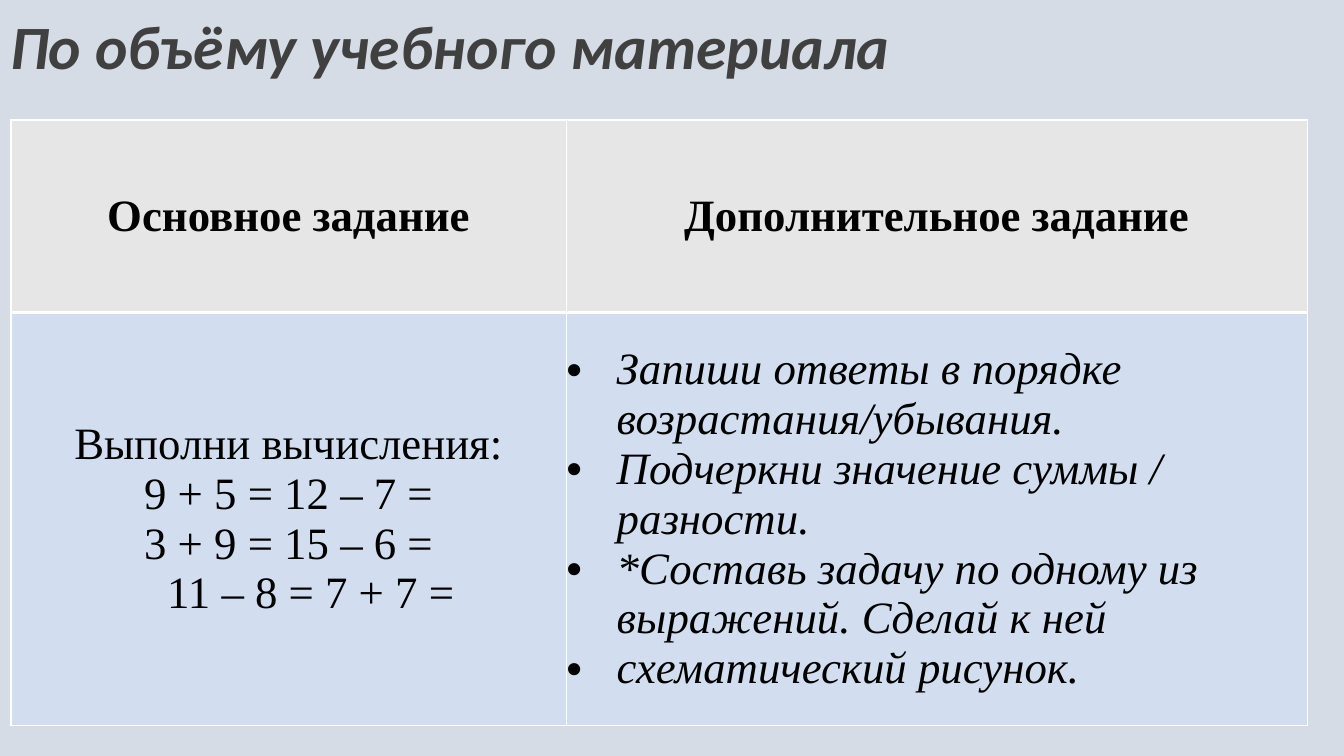
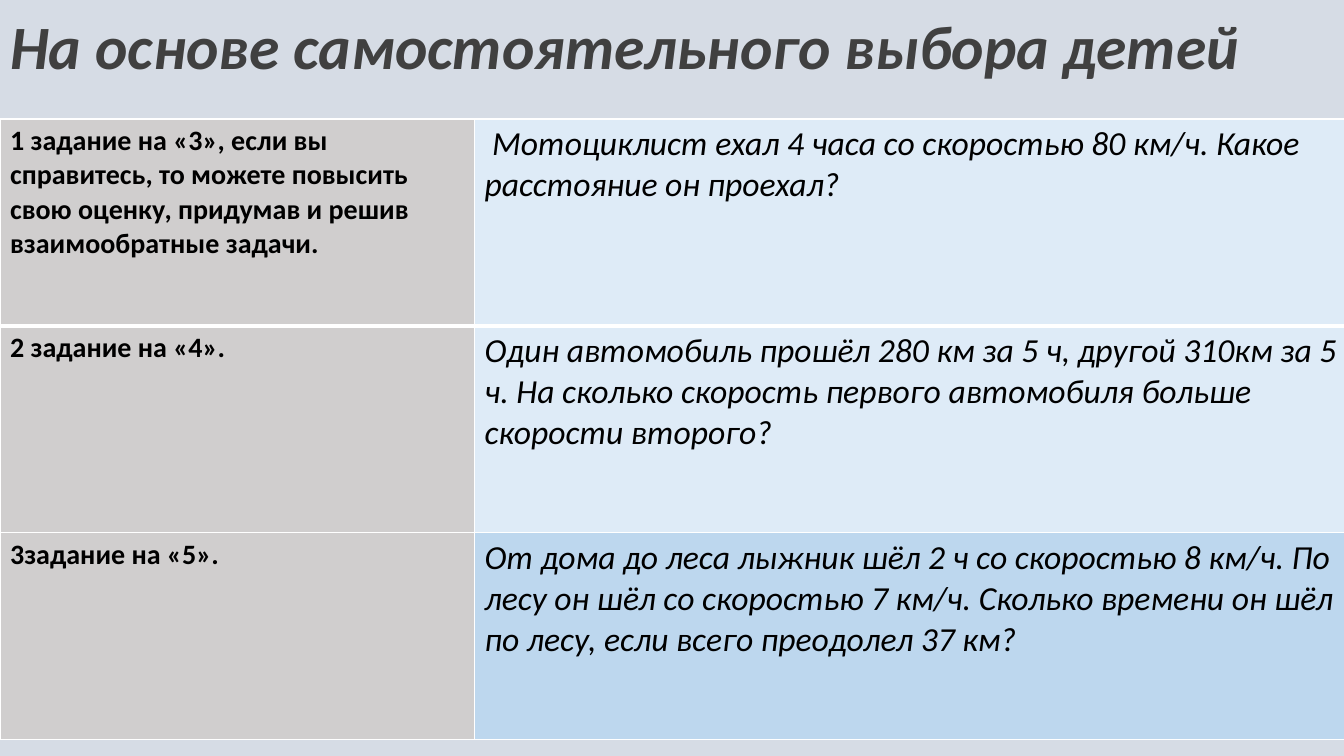
"""Build two slides of differentiated school tasks, each a title over a table."""
from lxml.etree import SubElement
from pptx import Presentation
from pptx.dml.color import RGBColor
from pptx.enum.text import MSO_ANCHOR, MSO_AUTO_SIZE, PP_ALIGN
from pptx.oxml.ns import qn
from pptx.util import Inches, Pt

SANS, SERIF = "Calibri", "Times New Roman"
BACKGROUND, TITLE_INK, INK, RULE = "D6DCE5", "404040", "000000", "FFFFFF"
HEADER_GREY, TASK_GREY = "E7E6E6", "D0CECE"
BODY_BLUE, PALE_BLUE, STRONG_BLUE = "D2DEEF", "DEEBF7", "BDD7EE"
GRID_COLUMNS, GRID_ROWS = 160, 90


def paint(fill, color):
    """Fill with a solid hex colour."""
    fill.solid()
    fill.fore_color.rgb = RGBColor.from_string(color)


def write(frame, *lines, font=SANS, size=20, color=INK, bold=False, italic=False,
          align=PP_ALIGN.LEFT, indent=0, bullet=None):
    """Add each line to the frame as a formatted paragraph."""
    for line in lines:
        para = frame.add_paragraph() if frame.text else frame.paragraphs[0]
        para.alignment = align
        properties = para._p.get_or_add_pPr()
        if indent:
            properties.set("marL", str(Inches(indent)))
        if bullet:
            properties.set("indent", str(-Inches(indent)))
            SubElement(properties, qn("a:buFont"), typeface="Arial")
            SubElement(properties, qn("a:buChar"), char=bullet)
        span = para.add_run()
        span.text = line
        span.font.name, span.font.size = font, Pt(size)
        span.font.bold, span.font.italic = bold, italic
        paint(span.font.fill, color)


def add_borders(cell, widths):
    """Rule the cell's sides with the given widths in points."""
    properties = cell._tc.get_or_add_tcPr()
    for side, width in widths.items():
        line = SubElement(properties, qn(f"a:ln{side}"), w=str(Pt(width)))
        fill = SubElement(line, qn("a:solidFill"))
        SubElement(fill, qn("a:srgbClr"), val=RULE)


class Lesson:
    """Hold the deck's style and its current slide."""

    def __init__(self):
        """Start a widescreen deck with the shared background."""
        self.deck = Presentation()
        self.deck.slide_width, self.deck.slide_height = Inches(13.333), Inches(7.5)
        paint(self.deck.slide_master.background.fill, BACKGROUND)
        self.slide = None

    def across(self, columns):
        """Turn grid columns into a length."""
        return round(self.deck.slide_width * columns / GRID_COLUMNS)

    def down(self, rows):
        """Turn grid rows into a length."""
        return round(self.deck.slide_height * rows / GRID_ROWS)

    def add_slide(self, title, columns, rows):
        """Open a slide whose title starts in the top left corner."""
        self.slide = self.deck.slides.add_slide(self.deck.slide_layouts[5])
        box = self.slide.shapes.title
        box.left, box.top = 0, 0
        box.width, box.height = self.across(columns), self.down(rows)
        frame = box.text_frame
        frame.word_wrap, frame.auto_size = True, MSO_AUTO_SIZE.NONE
        frame.vertical_anchor, frame.margin_top = MSO_ANCHOR.TOP, Inches(0.08)
        write(frame, title, size=44, color=TITLE_INK, bold=True, italic=True)

    def add_table(self, left, top, columns, rows, fills):
        """Add a filled table with a heavy rule under its first row."""
        table = self.slide.shapes.add_table(
            len(rows), len(columns), self.across(left), self.down(top),
            self.across(sum(columns)), self.down(sum(rows))).table
        table.first_row = table.horz_banding = False
        for column, width in zip(table.columns, columns):
            column.width = self.across(width)
        for index, (row, height) in enumerate(zip(table.rows, rows)):
            row.height = self.down(height)
            widths = {"L": 1, "R": 1, "T": 3 if index == 1 else 1,
                      "B": 3 if index == 0 else 1}
            for cell, fill in zip(row.cells, fills[index]):
                add_borders(cell, widths)
                paint(cell.fill, fill)
        return table


def add_volume_slide(lesson):
    """Show the main task beside the additional one."""
    lesson.add_slide("По объёму учебного материала", 157, 88)
    table = lesson.add_table(1.3, 14.28, [66.12, 88.2], [22.92, 49.2],
                             [[HEADER_GREY] * 2, [BODY_BLUE] * 2])
    for cell in table.iter_cells():
        cell.margin_left = cell.margin_right = cell.margin_top = cell.margin_bottom = 0
        cell.vertical_anchor = MSO_ANCHOR.MIDDLE
    style = {"font": SERIF, "size": 32}
    for column, heading in enumerate(["Основное задание", "Дополнительное задание"]):
        write(table.cell(0, column).text_frame, heading, bold=True,
              align=PP_ALIGN.CENTER, **style)
    main_task = table.cell(1, 0).text_frame
    write(main_task, "Выполни вычисления:", "9 + 5 = 12 – 7 =", "3 + 9 = 15 – 6 =",
          align=PP_ALIGN.CENTER, **style)
    write(main_task, "11 – 8 = 7 + 7 =", indent=1.55, **style)
    write(table.cell(1, 1).text_frame,
          "Запиши ответы в порядке возрастания/убывания.",
          "Подчеркни значение суммы / разности.",
          "*Составь задачу по одному из выражений. Сделай к ней",
          "схематический рисунок.",
          italic=True, indent=0.5, bullet="•", **style)


def add_choice_slide(lesson):
    """Show the three tasks that children choose from."""
    lesson.add_slide("На основе самостоятельного выбора детей", 160, 89)
    tasks = [
        ("1 задание на «3», если вы справитесь, то можете повысить свою оценку, "
         "придумав и решив взаимообратные задачи.",
         " Мотоциклист ехал 4 часа со скоростью 80 км/ч. Какое расстояние он проехал?",
         PALE_BLUE),
        ("2 задание на «4».",
         "Один автомобиль прошёл 280 км за 5 ч, другой 310км за 5 ч. На сколько "
         "скорость первого автомобиля больше скорости второго?",
         PALE_BLUE),
        ("3задание на «5».",
         "От дома до леса лыжник шёл 2 ч со скоростью 8 км/ч. По лесу он шёл со "
         "скоростью 7 км/ч. Сколько времени он шёл по лесу, если всего преодолел 37 км?",
         STRONG_BLUE),
    ]
    table = lesson.add_table(0, 14.16, [56.5, 103.92], [24.64] * len(tasks),
                             [[TASK_GREY, fill] for _, _, fill in tasks])
    for row, (grade, problem, _) in enumerate(tasks):
        write(table.cell(row, 0).text_frame, grade, bold=True)
        write(table.cell(row, 1).text_frame, problem, size=24, italic=True)


def main():
    """Build and save the deck."""
    lesson = Lesson()
    add_volume_slide(lesson)
    add_choice_slide(lesson)
    lesson.deck.save("out.pptx")


if __name__ == "__main__":
    main()
